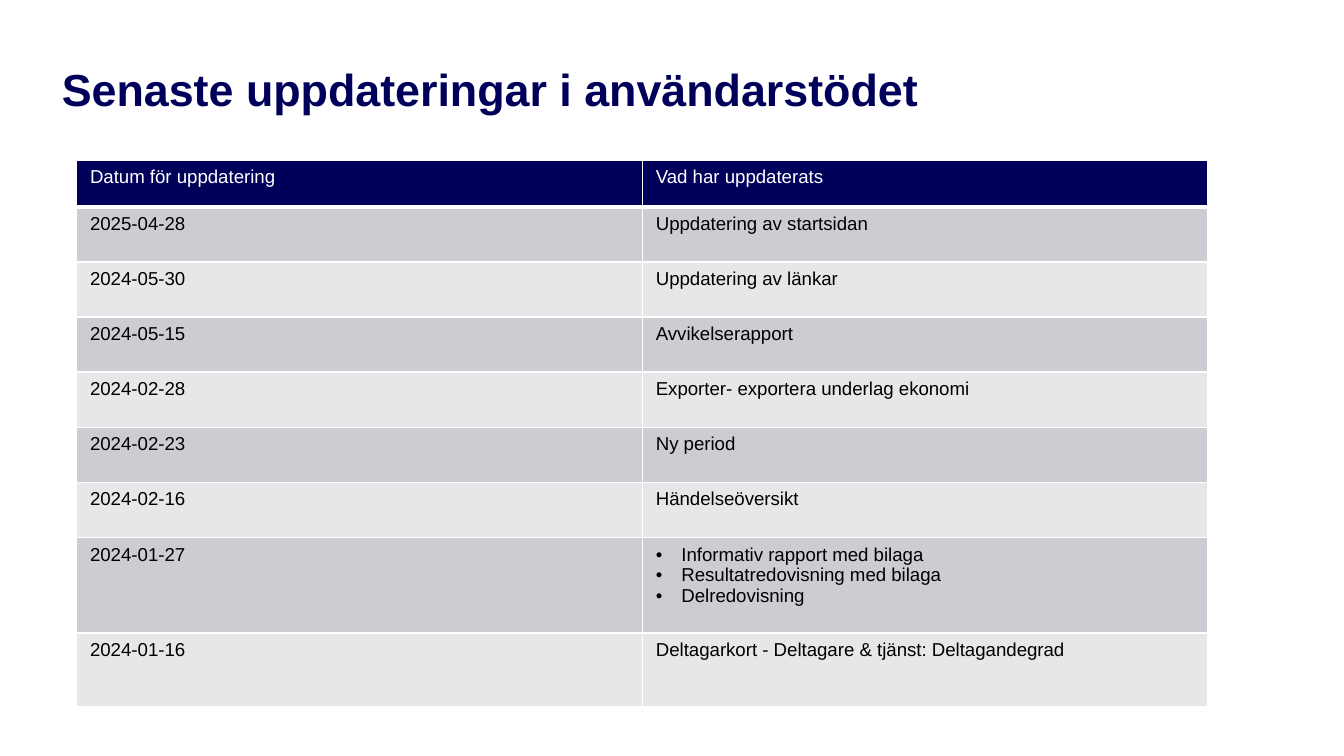
from lxml import etree
from pptx import Presentation
from pptx.dml.color import RGBColor
from pptx.enum.text import MSO_ANCHOR
from pptx.oxml.ns import qn
from pptx.util import Inches, Pt

TOP = MSO_ANCHOR.TOP
FONT = "Arial"
SLIDE_WIDTH = 10
COLORS = {
    "navy": "00005A",
    "white": "FFFFFF",
    "black": "000000",
    "dark_band": "CCCCD2",
    "light_band": "E7E7EA",
}
HEADINGS = ("Datum för uppdatering", ["Vad har uppdaterats"])
UPDATES = [
    ("2025-04-28", ["Uppdatering av startsidan"]),
    ("2024-05-30", ["Uppdatering av länkar"]),
    ("2024-05-15", ["Avvikelserapport"]),
    ("2024-02-28", ["Exporter- exportera underlag ekonomi"]),
    ("2024-02-23", ["Ny period"]),
    ("2024-02-16", ["Händelseöversikt"]),
    ("2024-01-27", ["Informativ rapport med bilaga",
                    "Resultatredovisning med bilaga",
                    "Delredovisning"]),
    ("2024-01-16", ["Deltagarkort - Deltagare & tjänst: Deltagandegrad"]),
]
ROW_HEIGHTS = [0.35] + [0.41] * 6 + [0.71, 0.55]
COLUMN_WIDTH = 4.21


def rgb(name):
    return RGBColor.from_string(COLORS[name])


def add_bullet(paragraph):
    properties = paragraph._p.get_or_add_pPr()
    properties.set("marL", str(Inches(0.19)))
    properties.set("indent", str(-Inches(0.19)))
    etree.SubElement(properties, qn("a:buFont"), typeface=FONT)
    etree.SubElement(properties, qn("a:buChar"), char="•")


def write_text(frame, lines, size=10, color="black", bold=False):
    for index, line in enumerate(lines):
        paragraph = frame.paragraphs[0] if index == 0 else frame.add_paragraph()
        if len(lines) > 1:
            add_bullet(paragraph)
        run = paragraph.add_run()
        run.text = line
        run.font.name = FONT
        run.font.size = Pt(size)
        run.font.bold = bold
        run.font.color.rgb = rgb(color)


def set_borders(cell, top=1, bottom=1):
    properties = cell._tc.get_or_add_tcPr()
    widths = {"a:lnL": 1, "a:lnR": 1, "a:lnT": top, "a:lnB": bottom}
    for position, (tag, width) in enumerate(widths.items()):
        border = etree.Element(qn(tag), w=str(Pt(width)))
        fill = etree.SubElement(border, qn("a:solidFill"))
        etree.SubElement(fill, qn("a:srgbClr"), val=COLORS["white"])
        properties.insert(position, border)


def add_title(slide, title):
    box = slide.shapes.add_textbox(Inches(0.46), Inches(0.46), Inches(8.12), Inches(0.74))
    frame = box.text_frame
    frame.word_wrap = True
    frame.vertical_anchor = TOP
    frame.margin_left = frame.margin_right = 0
    frame.margin_top = frame.margin_bottom = 0
    write_text(frame, [title], size=24, color="navy", bold=True)


def fill_cell(cell, lines, row):
    heading = row == 0
    band = "dark_band" if row % 2 else "light_band"
    cell.fill.solid()
    cell.fill.fore_color.rgb = rgb("navy" if heading else band)
    set_borders(cell, top=3 if row == 1 else 1, bottom=3 if heading else 1)
    write_text(cell.text_frame, lines, color="white" if heading else "black")


def add_update_table(slide):
    entries = [HEADINGS] + UPDATES
    table = slide.shapes.add_table(
        len(entries), 2, Inches(0.57), Inches(1.19),
        Inches(2 * COLUMN_WIDTH), Inches(sum(ROW_HEIGHTS))).table
    for column in table.columns:
        column.width = Inches(COLUMN_WIDTH)
    for row, (date, changes) in enumerate(entries):
        table.rows[row].height = Inches(ROW_HEIGHTS[row])
        fill_cell(table.cell(row, 0), [date], row)
        fill_cell(table.cell(row, 1), changes, row)


def main():
    presentation = Presentation()
    presentation.slide_width = Inches(SLIDE_WIDTH)
    presentation.slide_height = Inches(SLIDE_WIDTH * 9 / 16)
    slide = presentation.slides.add_slide(presentation.slide_layouts[6])
    add_title(slide, "Senaste uppdateringar i användarstödet")
    add_update_table(slide)
    presentation.save("out.pptx")


if __name__ == "__main__":
    main()
